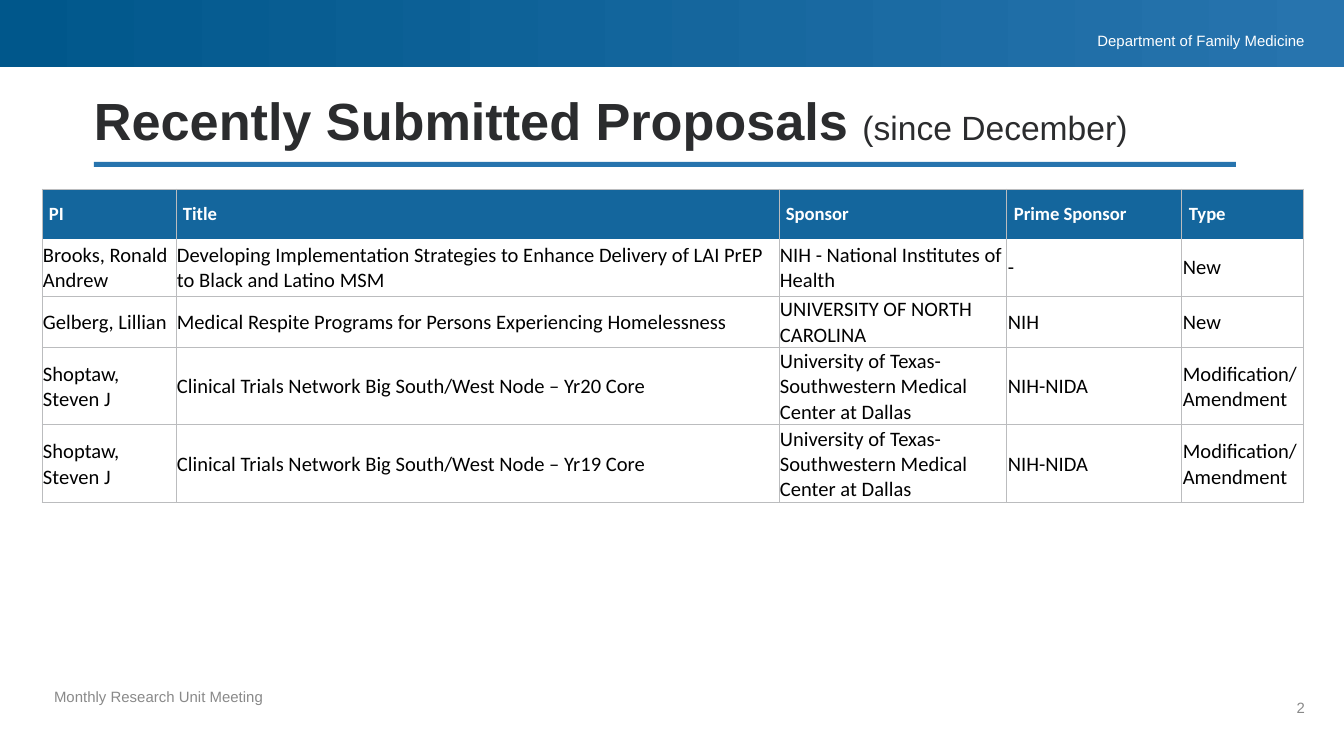
from typing import NamedTuple

from lxml.etree import SubElement
from pptx import Presentation
from pptx.dml.color import RGBColor
from pptx.enum.shapes import MSO_SHAPE as Preset
from pptx.enum.text import MSO_ANCHOR as Anchor, PP_ALIGN as Align
from pptx.oxml.ns import qn
from pptx.util import Pt

EMU_PER_PX = 914400 / 134.4
COLORS = {
    "deep_blue": "00578B", "blue": "2774AE", "header": "14669D",
    "title": "2B2C2E", "muted": "898989", "border": "BBBCBE",
    "white": "FFFFFF", "black": "000000",
}
NO_TABLE_STYLE = "{2D5ABB26-0587-4C30-8999-92F81FD0307C}"


class Box(NamedTuple):
    left: int
    top: int
    width: int
    height: int


class Run(NamedTuple):
    text: str
    size: int
    color: str
    bold: bool = False


class Label(NamedTuple):
    box: Box
    runs: list[Run]
    align: Align = Align.LEFT
    anchor: Anchor = Anchor.TOP
    line_spacing: float = 1.0


class RowStyle(NamedTuple):
    size: int
    color: str
    fill: str
    bold: bool
    inset: int
    sides: str


LABELS = [
    Label(Box(968, 32, 337, 17),
          [Run("Department of Family Medicine", 8, "white")], Align.RIGHT),
    Label(Box(54, 690, 524, 54),
          [Run("Monthly Research Unit Meeting", 8, "muted")], line_spacing=0.9),
    Label(Box(1238, 699, 67, 54), [Run("2", 8, "muted")], Align.RIGHT),
    Label(Box(94, 94, 1142, 58),
          [Run("Recently Submitted Proposals ", 28, "title", True),
           Run("(since December)", 18, "title")],
          anchor=Anchor.BOTTOM, line_spacing=0.9),
]

TABLE_LEFT, TABLE_TOP = 42, 189
COLUMN_WIDTHS = [134, 603, 228, 175, 122]
ROW_HEIGHTS = [50, 57, 52, 77, 78]
HEADER_STYLE = RowStyle(10, "white", "header", True, 7, "LRT")
BODY_STYLE = RowStyle(11, "black", "white", False, 1, "LRB")
TEXAS = "University of Texas-Southwestern Medical Center at Dallas"
PROPOSALS = [
    ["PI", "Title", "Sponsor", "Prime Sponsor", "Type"],
    ["Brooks, Ronald Andrew",
     "Developing Implementation Strategies to Enhance Delivery of LAI PrEP "
     "to Black and Latino MSM",
     "NIH - National Institutes of Health", "-", "New"],
    ["Gelberg, Lillian",
     "Medical Respite Programs for Persons Experiencing Homelessness",
     "UNIVERSITY OF NORTH CAROLINA", "NIH", "New"],
    *[["Shoptaw, Steven J",
       f"Clinical Trials Network Big South/West Node – Yr{year} Core",
       TEXAS, "NIH-NIDA", "Modification/ Amendment"] for year in (20, 19)],
]


def px(length: int) -> int:
    return round(length * EMU_PER_PX)


def rgb(name: str) -> RGBColor:
    return RGBColor.from_string(COLORS[name])


def set_font(font, name: str, size: int, color: str, bold: bool) -> None:
    font.name, font.size, font.bold = name, Pt(size), bold
    font.color.rgb = rgb(color)


def add_bar(slide, box: Box, colors: list[str]) -> None:
    """Draw a rectangle, solid for one colour and a gradient for two."""
    shape = slide.shapes.add_shape(Preset.RECTANGLE, *map(px, box))
    shape.shadow.inherit = False
    shape.line.fill.background()
    if len(colors) == 1:
        shape.fill.solid()
        shape.fill.fore_color.rgb = rgb(colors[0])
    else:
        shape.fill.gradient()
        shape.fill.gradient_angle = 0
        for stop, color, position in zip(shape.fill.gradient_stops, colors, (0, 1)):
            stop.color.rgb = rgb(color)
            stop.position = position


def add_label(slide, label: Label) -> None:
    frame = slide.shapes.add_textbox(*map(px, label.box)).text_frame
    frame.word_wrap = True
    frame.vertical_anchor = label.anchor
    frame.margin_left = frame.margin_right = 0
    frame.margin_top = frame.margin_bottom = 0
    paragraph = frame.paragraphs[0]
    paragraph.alignment = label.align
    paragraph.line_spacing = label.line_spacing
    for part in label.runs:
        run = paragraph.add_run()
        run.text = part.text
        set_font(run.font, "Arial", part.size, part.color, part.bold)


def add_borders(cell, sides: str) -> None:
    properties = cell._tc.get_or_add_tcPr()
    for side in sides:
        line = SubElement(properties, qn(f"a:ln{side}"), w=str(Pt(0.5)))
        fill = SubElement(line, qn("a:solidFill"))
        SubElement(fill, qn("a:srgbClr"), val=COLORS["border"])


def fill_cell(cell, text: str, style: RowStyle) -> None:
    add_borders(cell, style.sides)
    cell.fill.solid()
    cell.fill.fore_color.rgb = rgb(style.fill)
    cell.vertical_anchor = Anchor.MIDDLE
    cell.margin_left = cell.margin_right = cell.margin_top = px(style.inset)
    cell.margin_bottom = 0 if style is BODY_STYLE else px(style.inset)
    cell.text_frame.text = text
    run = cell.text_frame.paragraphs[0].runs[0]
    set_font(run.font, "Calibri", style.size, style.color, style.bold)


def add_proposals(slide) -> None:
    box = Box(TABLE_LEFT, TABLE_TOP, sum(COLUMN_WIDTHS), sum(ROW_HEIGHTS))
    table = slide.shapes.add_table(
        len(PROPOSALS), len(COLUMN_WIDTHS), *map(px, box)).table
    table._tbl.tblPr.find(qn("a:tableStyleId")).text = NO_TABLE_STYLE
    table.horz_banding = False
    for column, width in zip(table.columns, COLUMN_WIDTHS):
        column.width = px(width)
    for index, (row, height) in enumerate(zip(table.rows, ROW_HEIGHTS)):
        row.height = px(height)
        style = BODY_STYLE if index else HEADER_STYLE
        for cell, text in zip(row.cells, PROPOSALS[index]):
            fill_cell(cell, text, style)


def main() -> None:
    presentation = Presentation()
    presentation.slide_width, presentation.slide_height = px(1344), px(756)
    slide = presentation.slides.add_slide(presentation.slide_layouts[6])

    # Title rule and top banner
    add_bar(slide, Box(94, 162, 1142, 5), ["blue"])
    add_bar(slide, Box(0, 0, 1344, 67), ["deep_blue", "blue"])

    # Banner text, footer, page number and title
    for label in LABELS:
        add_label(slide, label)

    # Proposals table
    add_proposals(slide)
    presentation.save("out.pptx")


if __name__ == "__main__":
    main()
